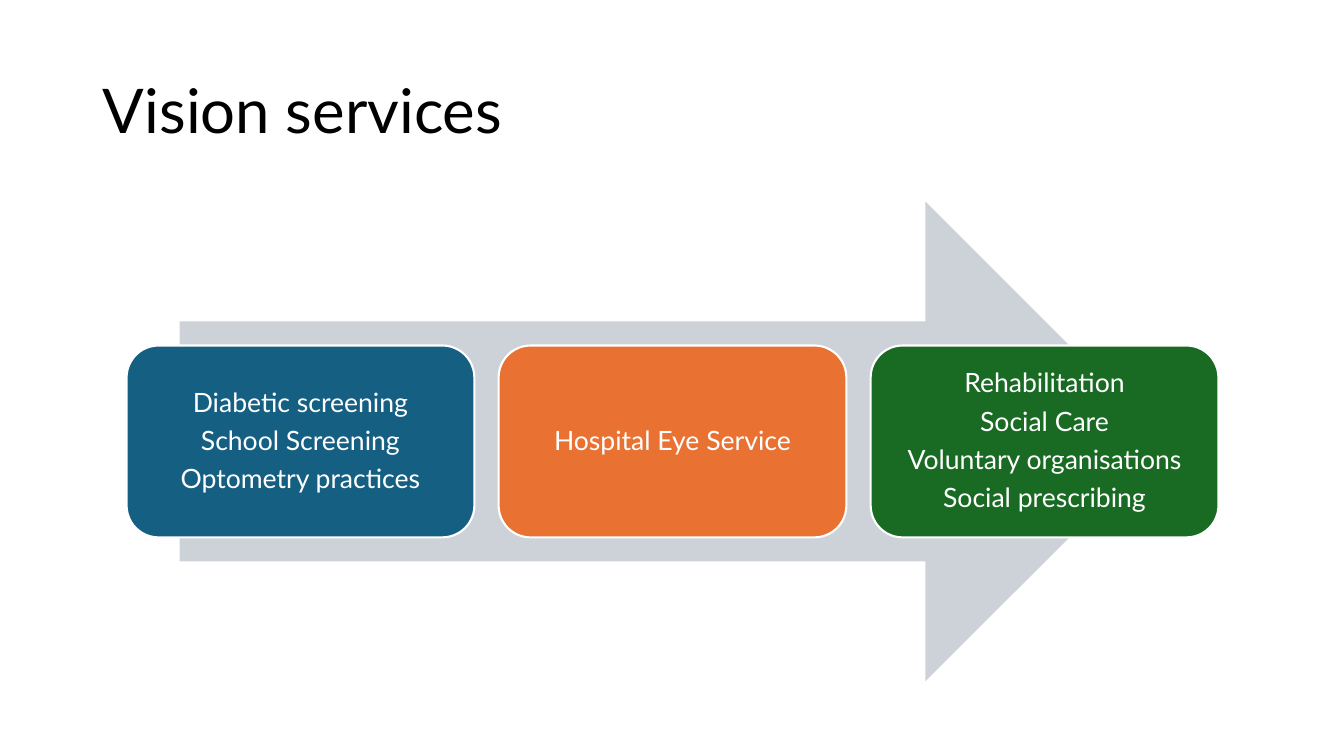
from dataclasses import dataclass

from pptx import Presentation
from pptx.dml.color import RGBColor
from pptx.enum.shapes import MSO_SHAPE
from pptx.enum.text import MSO_ANCHOR, PP_ALIGN
from pptx.util import Inches, Pt


@dataclass(frozen=True)
class Theme:
    font: str = "Lato"
    title_size: int = 44
    stage_size: int = 19
    ink: str = "000000"
    paper: str = "FFFFFF"
    arrow: str = "CCD2D8"
    community: str = "156082"
    hospital: str = "E97132"
    support: str = "196B24"


theme = Theme()


def write_text(frame, lines, *, size, color, align, inset, space_after=0):
    frame.word_wrap = True
    frame.vertical_anchor = MSO_ANCHOR.MIDDLE
    frame.margin_left = frame.margin_right = Inches(inset[0])
    frame.margin_top = frame.margin_bottom = Inches(inset[1])
    frame.text = "\n".join(lines)
    for paragraph in frame.paragraphs:
        paragraph.alignment = align
        paragraph.line_spacing = 0.9
        paragraph.space_before = Pt(0)
        paragraph.space_after = Pt(space_after)
        paragraph.font.name = theme.font
        paragraph.font.size = Pt(size)
        paragraph.font.color.rgb = RGBColor.from_string(color)


def add_block(kind, left, top, width, height, fill):
    block = slide.shapes.add_shape(
        kind, Inches(left), Inches(top), Inches(width), Inches(height)
    )
    block.shadow.inherit = False
    block.fill.solid()
    block.fill.fore_color.rgb = RGBColor.from_string(fill)
    block.line.fill.background()
    return block


presentation = Presentation()
presentation.slide_width = Inches(13.33)
presentation.slide_height = Inches(7.5)
slide = presentation.slides.add_slide(presentation.slide_layouts[5])

# Title
title = slide.shapes.title
title.left, title.top = Inches(0.92), Inches(0.4)
title.width, title.height = Inches(11.5), Inches(1.45)
write_text(title.text_frame, ["Vision services"], size=theme.title_size,
           color=theme.ink, align=PP_ALIGN.LEFT, inset=(0.1, 0.05))

# Arrow behind the stages, 85 % of the content width
content_left, content_top, content_width, content_height = 0.92, 2, 11.5, 4.76
arrow_width = 0.85 * content_width
add_block(MSO_SHAPE.RIGHT_ARROW, content_left + (content_width - arrow_width) / 2,
          content_top, arrow_width, content_height, theme.arrow)

# Three equal stages, centred on the arrow
stages = [
    (theme.community, ["Diabetic screening", "School Screening", "Optometry practices"]),
    (theme.hospital, ["Hospital Eye Service"]),
    (theme.support, ["Rehabilitation", "Social Care", "Voluntary organisations",
                     "Social prescribing"]),
]
stage_width, stage_gap = 0.3 * content_width, 0.24
stage_height = 0.4 * content_height
stage_top = content_top + (content_height - stage_height) / 2
row_width = len(stages) * stage_width + (len(stages) - 1) * stage_gap
row_left = content_left + (content_width - row_width) / 2

for column, (color, services) in enumerate(stages):
    stage = add_block(MSO_SHAPE.ROUNDED_RECTANGLE,
                      row_left + column * (stage_width + stage_gap),
                      stage_top, stage_width, stage_height, color)
    stage.line.color.rgb = RGBColor.from_string(theme.paper)
    stage.line.width = Pt(1.5)
    write_text(stage.text_frame, services, size=theme.stage_size, color=theme.paper,
               align=PP_ALIGN.CENTER, inset=(0.08, 0.08),
               space_after=0.35 * theme.stage_size)

presentation.save("out.pptx")
